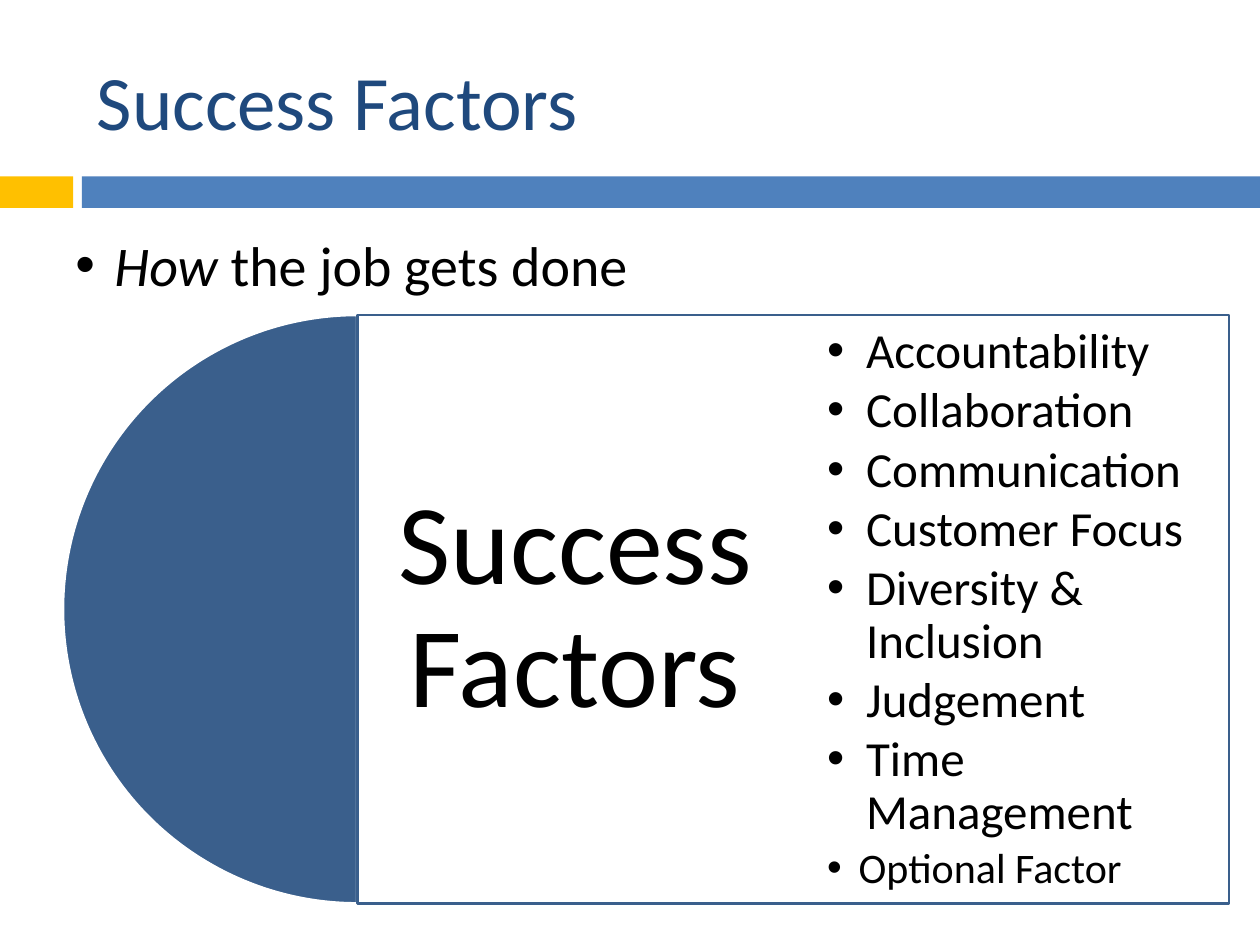
import pptx
import pptx.util
from lxml import etree
from pptx.dml.color import RGBColor
from pptx.enum.shapes import MSO_SHAPE
from pptx.enum.text import MSO_ANCHOR, PP_ALIGN
from pptx.oxml.ns import qn

Inches, Pt = pptx.util.Inches, pptx.util.Pt

TITLE = "Success Factors"
LEAD = [("How", True), (" the job gets done", False)]
FACTORS = ["Accountability", "Collaboration", "Communication", "Customer Focus",
           "Diversity & Inclusion", "Judgement", "Time Management"]
OPTIONAL = "Optional Factor"

FONT = "Calibri"
GOLD, BLUE, NAVY, STEEL = "FFC000", "4F81BD", "1F497D", "3A5F8C"
BLACK, WHITE = "000000", "FFFFFF"

PIE_LEFT, TOP, SIZE = 0.5, 2.5, 4.67
BOX_LEFT = PIE_LEFT + SIZE / 2
BOX_WIDTH = 6.92
HALF = BOX_WIDTH / 2


def rgb(color):
    return RGBColor.from_string(color)


def add_shape(s, kind, box, fill, line=None):
    sp = s.shapes.add_shape(kind, *map(Inches, box))
    sp.shadow.inherit = False
    sp.fill.solid()
    sp.fill.fore_color.rgb = rgb(fill)
    if line:
        sp.line.color.rgb = rgb(line)
        sp.line.width = Pt(1.5)
    else:
        sp.line.fill.background()
    return sp


def set_bullet(p, indent):
    pPr = p._p.get_or_add_pPr()
    pPr.set("marL", str(Inches(indent)))
    pPr.set("indent", str(-Inches(indent)))
    etree.SubElement(pPr, qn("a:buFont"), typeface="Arial")
    etree.SubElement(pPr, qn("a:buChar"), char="•")


def add_text(s, box, paragraphs, color=BLACK, anchor=MSO_ANCHOR.MIDDLE,
             align=PP_ALIGN.LEFT, inset=None, spacing=None, after=0):
    """Each paragraph is (runs, size, bullet indent); each run is (text, italic)."""
    tf = s.shapes.add_textbox(*map(Inches, box)).text_frame
    tf.word_wrap = True
    tf.vertical_anchor = anchor
    if inset is not None:
        tf.margin_left = tf.margin_right = Inches(inset)
        tf.margin_top = tf.margin_bottom = Inches(inset)
    for i, (runs, size, indent) in enumerate(paragraphs):
        p = tf.add_paragraph() if i else tf.paragraphs[0]
        p.alignment = align
        p.space_after = Pt(after)
        if spacing:
            p.line_spacing = spacing
        if indent:
            set_bullet(p, indent)
        for text, italic in runs:
            r = p.add_run()
            r.text = text
            r.font.name = FONT
            r.font.size = Pt(size)
            r.font.italic = italic
            r.font.color.rgb = rgb(color)


prs = pptx.Presentation()
prs.slide_width, prs.slide_height = Inches(10), Inches(7.5)
s = prs.slides.add_slide(prs.slide_layouts[6])

add_shape(s, MSO_SHAPE.RECTANGLE, (0, 1.4, 0.58, 0.25), GOLD)
add_shape(s, MSO_SHAPE.RECTANGLE, (0.65, 1.4, 9.35, 0.25), BLUE)
add_text(s, (0.67, 0.25, 8.92, 1.08), [([(TITLE, False)], 44, None)], color=NAVY)

half_disc = add_shape(s, MSO_SHAPE.PIE, (PIE_LEFT, TOP, SIZE, SIZE), STEEL, WHITE)
half_disc.adjustments[0] = 54   # 90 degrees
half_disc.adjustments[1] = 162  # 270 degrees

panel = add_shape(s, MSO_SHAPE.RECTANGLE, (BOX_LEFT, TOP, BOX_WIDTH, SIZE), WHITE, STEEL)
panel_color = panel.fill._xPr.find(qn("a:solidFill"))[0]
etree.SubElement(panel_color, qn("a:alpha"), val="90000")

add_text(s, (BOX_LEFT, TOP, HALF, SIZE), [([(TITLE, False)], 65, None)],
         align=PP_ALIGN.CENTER, inset=0.27, spacing=0.9)
factors = [([(name, False)], 28, 0.31) for name in FACTORS]
factors.append(([(OPTIONAL, False)], 24, 0.25))
add_text(s, (BOX_LEFT + HALF, TOP, HALF, SIZE), factors,
         inset=0.27, spacing=0.9, after=3.6)
add_text(s, (0.5, 1.78, 9, 0.64), [(LEAD, 32, 0.31)], anchor=MSO_ANCHOR.TOP)

prs.save("out.pptx")
